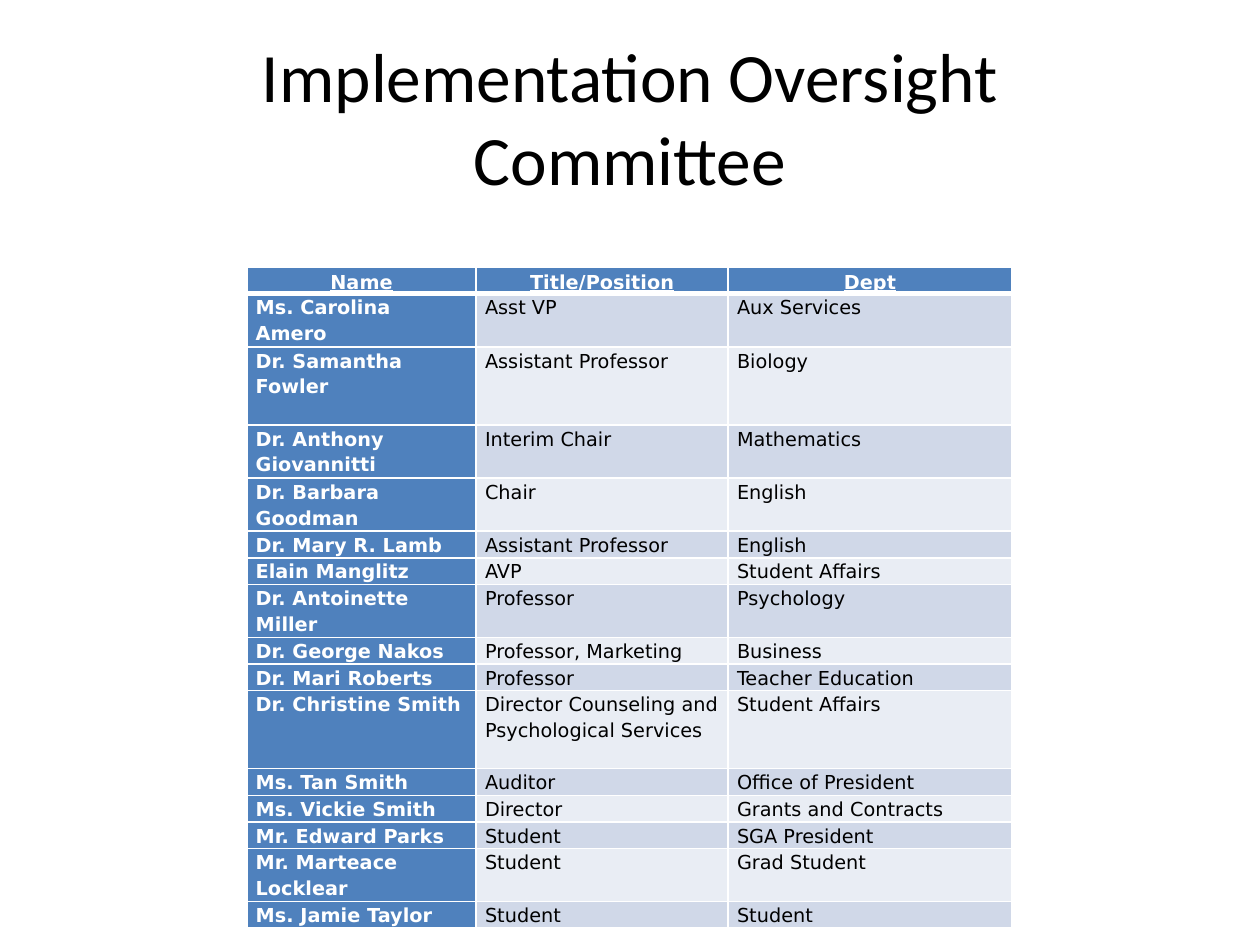
from lxml.etree import SubElement
from pptx import Presentation
from pptx.dml.color import RGBColor
from pptx.enum.text import MSO_ANCHOR, PP_ALIGN
from pptx.oxml.ns import qn
from pptx.util import Inches, Pt

COLORS = {
    "text": "000000",
    "white": "FFFFFF",
    "accent": "4F81BD",
    "dark_band": "D0D8E8",
    "light_band": "E9EDF4",
}
HEADINGS = ("Name", "Title/Position", "Dept")
MEMBERS = [
    ("Ms. Carolina Amero", "Asst VP", "Aux Services"),
    ("Dr. Samantha Fowler", "Assistant Professor", "Biology"),
    ("Dr. Anthony Giovannitti", "Interim Chair", "Mathematics"),
    ("Dr. Barbara Goodman", "Chair", "English"),
    ("Dr. Mary R. Lamb", "Assistant Professor", "English"),
    ("Elain Manglitz", "AVP", "Student Affairs"),
    ("Dr. Antoinette Miller", "Professor", "Psychology"),
    ("Dr. George Nakos", "Professor, Marketing", "Business"),
    ("Dr. Mari Roberts", "Professor", "Teacher Education"),
    ("Dr. Christine Smith", "Director Counseling and Psychological Services", "Student Affairs"),
    ("Ms. Tan Smith", "Auditor", "Office of President"),
    ("Ms. Vickie Smith", "Director", "Grants and Contracts"),
    ("Mr. Edward Parks", "Student", "SGA President"),
    ("Mr. Marteace Locklear", "Student", "Grad Student"),
    ("Ms. Jamie Taylor", "Student", "Student"),
]
TALL_ROWS = ("Dr. Samantha Fowler", "Dr. Christine Smith")


def write(frame, text, font, size, color="text", bold=False, underline=False,
          align=PP_ALIGN.LEFT, line_spacing=None):
    frame.word_wrap = True
    paragraph = frame.paragraphs[0]
    paragraph.text = text
    paragraph.alignment = align
    if line_spacing:
        paragraph.line_spacing = line_spacing
    for run in paragraph.runs:
        run.font.name = font
        run.font.size = Pt(size)
        run.font.bold = bold
        run.font.underline = underline
        run.font.color.rgb = RGBColor.from_string(COLORS[color])


def set_borders(cell, top=1, bottom=1):
    """Draw white cell edges; widths are in points."""
    properties = cell._tc.get_or_add_tcPr()
    for tag, width in (("lnL", 1), ("lnR", 1), ("lnT", top), ("lnB", bottom)):
        line = SubElement(properties, qn(f"a:{tag}"), w=str(Pt(width)))
        fill = SubElement(line, qn("a:solidFill"))
        SubElement(fill, qn("a:srgbClr"), val=COLORS["white"])


class SlideBuilder:
    """Places elements on a grid of 100 columns by 75 rows."""

    title_font = "Calibri"
    table_font = "DejaVu Sans"

    def __init__(self, presentation):
        self.column = presentation.slide_width / 100
        self.row = presentation.slide_height / 75
        self.slide = presentation.slides.add_slide(presentation.slide_layouts[6])

    def box(self, left, top, width, height):
        return (round(left * self.column), round(top * self.row),
                round(width * self.column), round(height * self.row))

    def title(self, text, *place):
        frame = self.slide.shapes.add_textbox(*self.box(*place)).text_frame
        frame.vertical_anchor = MSO_ANCHOR.MIDDLE
        write(frame, text, self.title_font, 39.6, align=PP_ALIGN.CENTER)

    def table(self, rows, left, top, widths, heights):
        place = self.box(left, top, sum(widths), sum(heights))
        table = self.slide.shapes.add_table(len(rows), len(widths), *place).table
        for column, width in zip(table.columns, widths):
            column.width = round(width * self.column)
        for row, height in zip(table.rows, heights):
            row.height = round(height * self.row)
        for row_index, values in enumerate(rows):
            for column_index, text in enumerate(values):
                self.cell(table.cell(row_index, column_index), text, row_index, column_index)

    def cell(self, cell, text, row_index, column_index):
        is_heading = row_index == 0
        is_accent = is_heading or column_index == 0
        band = "dark_band" if row_index % 2 else "light_band"
        cell.margin_left = cell.margin_right = Inches(0.07)
        cell.margin_top = cell.margin_bottom = 0
        cell.vertical_anchor = MSO_ANCHOR.BOTTOM if is_heading else MSO_ANCHOR.TOP
        set_borders(cell, top=3 if row_index == 1 else 1, bottom=3 if is_heading else 1)
        cell.fill.solid()
        cell.fill.fore_color.rgb = RGBColor.from_string(COLORS["accent" if is_accent else band])
        write(cell.text_frame, text, self.table_font, 11,
              color="white" if is_accent else "text", bold=is_accent, underline=is_heading,
              align=PP_ALIGN.CENTER if is_heading else PP_ALIGN.LEFT, line_spacing=1.15)
        if text.startswith("Director Counseling") or text == MEMBERS[1][1] and row_index == 2:
            cell.text_frame.paragraphs[0].space_after = Pt(12 if row_index == 2 else 0)


def main():
    presentation = Presentation()
    presentation.slide_width, presentation.slide_height = Inches(10), Inches(7.5)
    builder = SlideBuilder(presentation)
    builder.title("Implementation Oversight\vCommittee", 5, 3, 90, 12.5)
    rows = [HEADINGS, *MEMBERS]
    heights = [6.2 if name in TALL_ROWS else 2.1 for name, *_ in rows]
    builder.table(rows, 19.6, 21.2, (18.2, 20, 22.5), heights)
    presentation.save("out.pptx")


if __name__ == "__main__":
    main()
